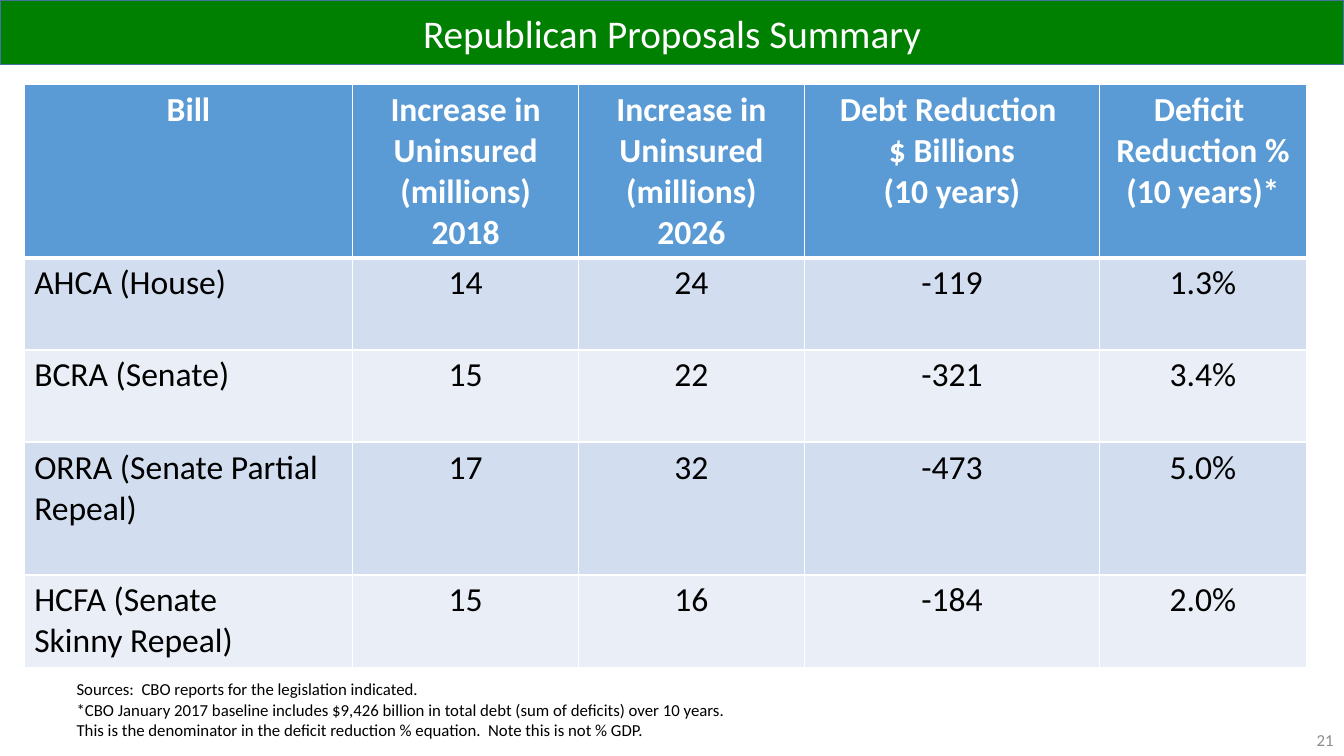
import dataclasses

import lxml.etree
import pptx
import pptx.dml.color
import pptx.enum.text
import pptx.oxml.ns
import pptx.util

Cm = pptx.util.Cm
Pt = pptx.util.Pt
ALIGN = pptx.enum.text.PP_ALIGN
ANCHOR = pptx.enum.text.MSO_ANCHOR


@dataclasses.dataclass(frozen=True)
class Theme:
    font: str = "Calibri"
    white: str = "FFFFFF"
    black: str = "000000"
    grey: str = "8C8C8C"
    green: str = "008000"
    outline: str = "43739E"
    header: str = "5B9BD5"
    bands: tuple = ("D2DEEF", "EAEFF7")
    title_size: int = 28
    table_size: int = 24
    note_size: int = 12


def rgb(code):
    return pptx.dml.color.RGBColor.from_string(code)


class SlideBuilder:
    def __init__(self, deck, theme):
        self.theme = theme
        self.page = deck.slides.add_slide(deck.slide_layouts[5])

    def add_lines(self, frame, lines, size, color, align=ALIGN.LEFT, bold=False):
        for index, line in enumerate(lines):
            para = frame.add_paragraph() if index else frame.paragraphs[0]
            para.alignment = align
            span = para.add_run()
            span.text = line
            span.font.name = self.theme.font
            span.font.size = Pt(size)
            span.font.bold = bold
            span.font.color.rgb = rgb(color)

    def title(self, text, width, height):
        banner = self.page.shapes.title
        banner.left, banner.top = Cm(0), Cm(0)
        banner.width, banner.height = Cm(width), Cm(height)
        banner.fill.solid()
        banner.fill.fore_color.rgb = rgb(self.theme.green)
        banner.line.color.rgb = rgb(self.theme.outline)
        banner.line.width = Pt(1)
        frame = banner.text_frame
        frame.auto_size = pptx.enum.text.MSO_AUTO_SIZE.NONE
        frame.vertical_anchor = ANCHOR.MIDDLE
        self.add_lines(frame, [text], self.theme.title_size, self.theme.white, ALIGN.CENTER)

    def text(self, lines, left, top, width, height, color, align=ALIGN.LEFT, anchor=ANCHOR.TOP):
        box = self.page.shapes.add_textbox(Cm(left), Cm(top), Cm(width), Cm(height))
        box.text_frame.word_wrap = True
        box.text_frame.vertical_anchor = anchor
        self.add_lines(box.text_frame, lines, self.theme.note_size, color, align)

    def border(self, cell, side, points):
        line = lxml.etree.SubElement(
            cell._tc.get_or_add_tcPr(), pptx.oxml.ns.qn(f"a:ln{side}"), w=str(Pt(points)))
        fill = lxml.etree.SubElement(line, pptx.oxml.ns.qn("a:solidFill"))
        lxml.etree.SubElement(fill, pptx.oxml.ns.qn("a:srgbClr"), val=self.theme.white)

    def table(self, rows, left, top, widths, heights):
        theme = self.theme
        grid = self.page.shapes.add_table(
            len(rows), len(widths), Cm(left), Cm(top), Cm(sum(widths)), Cm(sum(heights))).table
        for column, width in zip(grid.columns, widths):
            column.width = Cm(width)
        for r, (row, height) in enumerate(zip(rows, heights)):
            grid.rows[r].height = Cm(height)
            is_header = r == 0
            color = theme.white if is_header else theme.black
            for c, content in enumerate(row):
                cell = grid.cell(r, c)
                # Thick rule between the header and the first bill
                weights = {"L": 1, "R": 1, "T": 3 if r == 1 else 1, "B": 3 if is_header else 1}
                for side, points in weights.items():
                    self.border(cell, side, points)
                cell.fill.solid()
                cell.fill.fore_color.rgb = rgb(theme.header if is_header else theme.bands[(r - 1) % 2])
                align = ALIGN.CENTER if is_header or c else ALIGN.LEFT
                self.add_lines(cell.text_frame, content.split("\n"), theme.table_size, color, align, is_header)


BILLS = [
    ["Bill", "Increase in Uninsured (millions)\n2018", "Increase in Uninsured (millions)\n2026",
     "Debt Reduction \n$ Billions\n(10 years)", "Deficit \nReduction %\n(10 years)*"],
    ["AHCA (House)", "14", "24", "-119", "1.3%"],
    ["BCRA (Senate)", "15", "22", "-321", "3.4%"],
    ["ORRA (Senate Partial Repeal)", "17", "32", "-473", "5.0%"],
    ["HCFA (Senate\nSkinny Repeal)", "15", "16", "-184", "2.0%"],
]
NOTES = [
    "Sources:  CBO reports for the legislation indicated.",
    "*CBO January 2017 baseline includes $9,426 billion in total debt (sum of deficits) over 10 years.  "
    "This is the denominator in the deficit reduction % equation.  Note this is not % GDP.",
]


def main():
    theme = Theme()
    deck = pptx.Presentation()
    deck.slide_width, deck.slide_height = Cm(33.87), Cm(19.05)
    slide = SlideBuilder(deck, theme)

    # Slide number
    slide.text(["21"], 26.24, 18.14, 7.62, 1.01, theme.grey, ALIGN.RIGHT, ANCHOR.MIDDLE)
    # Title banner
    slide.title("Republican Proposals Summary", 33.87, 1.63)
    # Bill comparison
    slide.table(BILLS, 0.61, 2.13, [8.28, 5.69, 5.69, 7.44, 5.21], [4.37, 2.32, 2.32, 3.35, 2.32])
    # Sources
    slide.text(NOTES, 1.68, 16.99, 17.53, 1.8, theme.black)

    deck.save("out.pptx")


if __name__ == "__main__":
    main()
